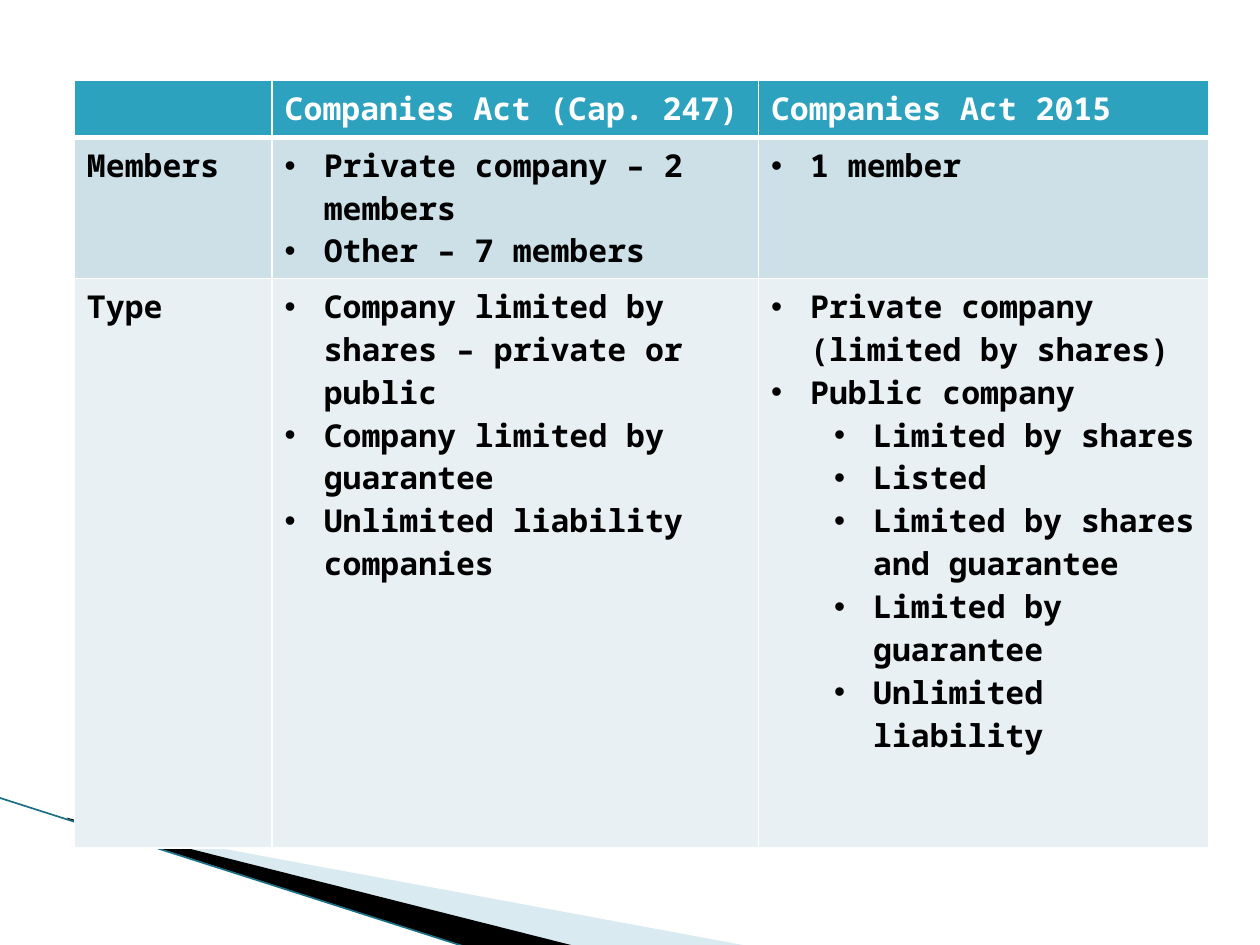
from dataclasses import dataclass

from lxml.etree import SubElement
from pptx import Presentation
from pptx.dml.color import RGBColor
from pptx.enum.shapes import MSO_CONNECTOR
from pptx.oxml.ns import qn
from pptx.util import Inches, Pt


@dataclass(frozen=True)
class Theme:
    font: str = "Noto Sans Mono"
    size: float = 18
    white: str = "FFFFFF"
    black: str = "000000"
    header: str = "2DA2BF"
    bands: tuple = ("CDE0E8", "E8F0F4")
    wedge: str = "A0CBDC"
    edge: str = "1B6F84"


class SlideBuilder:
    def __init__(self, s, theme):
        self.s = s
        self.theme = theme

    def polygon(self, points, color, opacity=None):
        (x, y), *rest = [(Inches(px), Inches(py)) for px, py in points]
        builder = self.s.shapes.build_freeform(x, y)
        builder.add_line_segments(rest, close=True)
        sp = builder.convert_to_shape()
        sp.shadow.inherit = False
        sp.fill.solid()
        sp.fill.fore_color.rgb = RGBColor.from_string(color)
        sp.line.fill.background()
        if opacity is not None:
            rgb = sp.fill._xPr.find(".//" + qn("a:srgbClr"))
            SubElement(rgb, qn("a:alpha"), val=str(opacity * 1000))

    def line(self, x1, y1, x2, y2, color, width):
        ends = [Inches(v) for v in (x1, y1, x2, y2)]
        cxn = self.s.shapes.add_connector(MSO_CONNECTOR.STRAIGHT, *ends)
        cxn.line.color.rgb = RGBColor.from_string(color)
        cxn.line.width = Pt(width)
        SubElement(cxn._element.spPr, qn("a:effectLst"))

    def table(self, left, top, widths, heights, rows):
        frame = self.s.shapes.add_table(
            len(rows), len(widths), Inches(left), Inches(top),
            Inches(sum(widths)), Inches(sum(heights)))
        table = frame.table
        for column, width in zip(table.columns, widths):
            column.width = Inches(width)
        for row, height in zip(table.rows, heights):
            row.height = Inches(height)
        fills = (self.theme.header, *self.theme.bands)
        for r, (texts, fill) in enumerate(zip(rows, fills)):
            for c, content in enumerate(texts):
                cell = table.cell(r, c)
                self.borders(cell, top=3 if r == 1 else 1, bottom=3 if r == 0 else 1)
                cell.fill.solid()
                cell.fill.fore_color.rgb = RGBColor.from_string(fill)
                color = self.theme.white if r == 0 else self.theme.black
                self.cell_text(cell.text_frame, content, color)

    def borders(self, cell, top, bottom):
        tc_pr = cell._tc.get_or_add_tcPr()
        for side, width in (("L", 1), ("R", 1), ("T", top), ("B", bottom)):
            ln = SubElement(tc_pr, qn(f"a:ln{side}"), w=str(Pt(width)))
            fill = SubElement(ln, qn("a:solidFill"))
            SubElement(fill, qn("a:srgbClr"), val=self.theme.white)

    def cell_text(self, tf, content, color):
        """Write a plain string, or a list of (level, text) bullets."""
        bulleted = isinstance(content, list)
        items = content if bulleted else [(0, content)]
        for i, (level, text) in enumerate(items):
            p = tf.paragraphs[0] if i == 0 else tf.add_paragraph()
            if bulleted:
                self.bullet(p, level)
            if text:
                r = p.add_run()
                r.text = text
                r.font.name = self.theme.font
                r.font.size = Pt(self.theme.size)
                r.font.bold = True
                r.font.color.rgb = RGBColor.from_string(color)

    def bullet(self, p, level):
        p.level = level
        p_pr = p._p.get_or_add_pPr()
        p_pr.set("marL", str(Inches(0.31 + 0.5 * level)))
        p_pr.set("indent", str(Inches(-0.31)))
        SubElement(p_pr, qn("a:buFont"), typeface="Arial")
        SubElement(p_pr, qn("a:buChar"), char="•")


def main():
    prs = Presentation()
    prs.slide_width, prs.slide_height = Inches(10), Inches(7.5)
    theme = Theme()
    slide = SlideBuilder(prs.slides.add_slide(prs.slide_layouts[6]), theme)

    slide.polygon([(0.55, 6.51), (5.95, 7.51), (4.56, 7.51), (0.55, 6.5)],
                  theme.wedge, opacity=40)
    slide.polygon([(0.53, 6.49), (4.57, 7.51), (3.72, 7.52), (0.54, 6.5)],
                  theme.black)
    slide.line(-0.01, 6.33, 3.71, 7.52, theme.edge, 0.95)

    slide.table(0.59, 0.64, widths=(1.57, 3.86, 3.57), heights=(0.45, 1.11, 4.52), rows=[
        ["", "Companies Act (Cap. 247)", "Companies Act 2015"],
        ["Members",
         [(0, "Private company – 2 members"), (0, "Other – 7 members")],
         [(0, "1 member")]],
        ["Type",
         [(0, "Company limited by shares – private or public"),
          (0, "Company limited by guarantee"),
          (0, "Unlimited liability companies")],
         [(0, "Private company (limited by shares)"),
          (0, "Public company"),
          (1, "Limited by shares"),
          (1, "Listed"),
          (1, "Limited by shares and guarantee"),
          (1, "Limited by guarantee"),
          (1, "Unlimited liability")]],
    ])
    prs.save("out.pptx")


if __name__ == "__main__":
    main()
